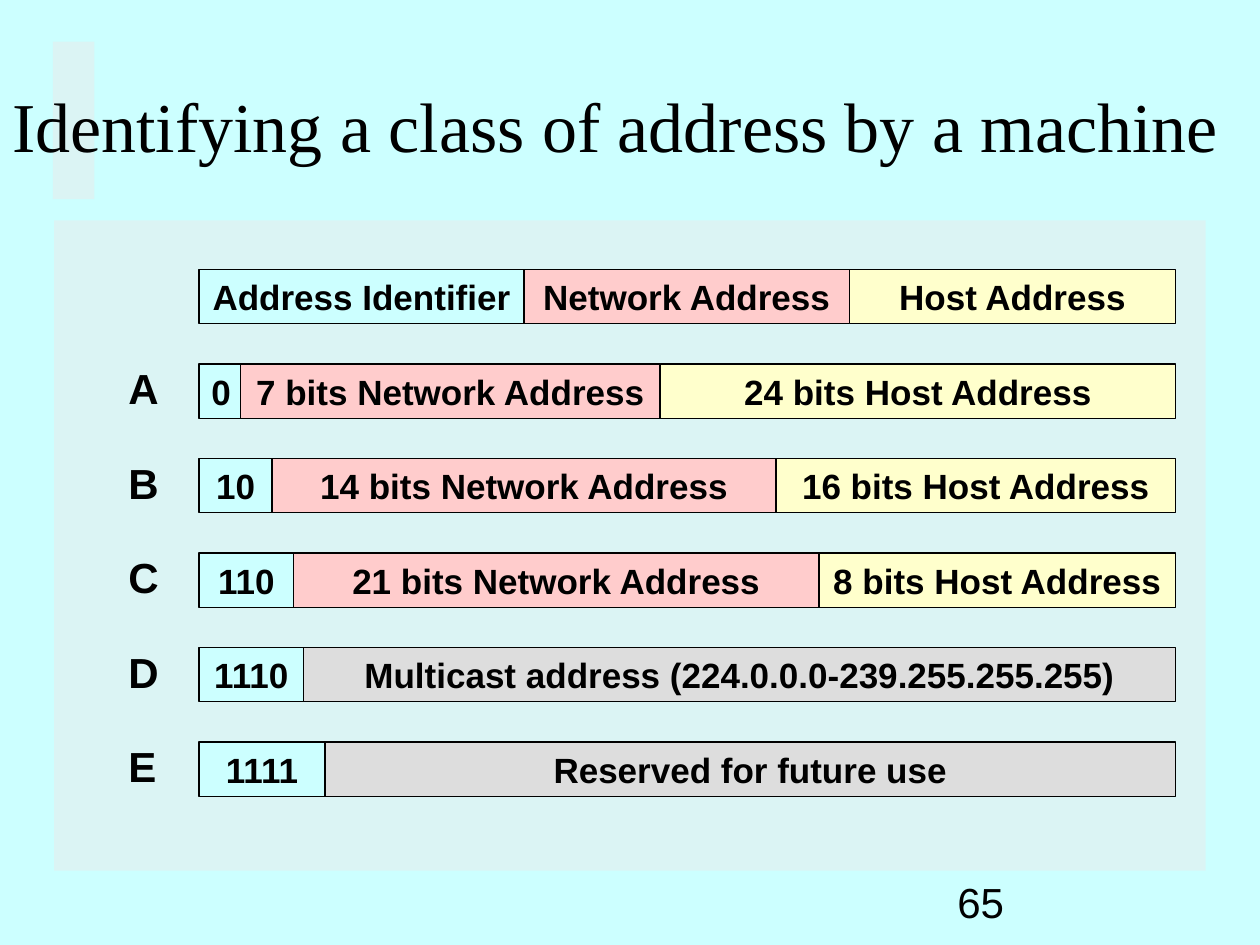
from pptx import Presentation
from pptx.util import Inches, Pt
from pptx.dml.color import RGBColor
from pptx.enum.shapes import MSO_SHAPE as Shape
from pptx.enum.text import PP_ALIGN as Align, MSO_ANCHOR as Anchor
from lxml import etree

AQUA, PINK, CREAM, GREY = "CCFFFF", "FFCCCC", "FFFFCC", "DDDDDD"
NS = "http://schemas.openxmlformats.org/drawingml/2006/main"

# Each row: class letter, then (text, fill, width); None takes what is left
ROWS = [
    ("", [("Address Identifier", AQUA, 2.58), ("Network Address", PINK, 2.58),
          ("Host Address", CREAM, None)]),
    ("A", [("0", AQUA, 0.33), ("7 bits Network Address", PINK, 3.33),
           ("24 bits Host Address", CREAM, None)]),
    ("B", [("10", AQUA, 0.58), ("14 bits Network Address", PINK, 4),
           ("16 bits Host Address", CREAM, None)]),
    ("C", [("110", AQUA, 0.75), ("21 bits Network Address", PINK, 4.17),
           ("8 bits Host Address", CREAM, None)]),
    ("D", [("1110", AQUA, 0.83),
           ("Multicast address (224.0.0.0-239.255.255.255)", GREY, None)]),
    ("E", [("1111", AQUA, 1), ("Reserved for future use", GREY, None)]),
]


def color(code):
    return RGBColor.from_string(code)


def write(shape, text, size=20, font="Arial", bold=False,
          align=Align.LEFT, anchor=Anchor.TOP):
    frame = shape.text_frame
    frame.word_wrap = True
    frame.vertical_anchor = anchor
    para = frame.paragraphs[0]
    para.alignment = align
    run = para.add_run()
    run.text = text
    run.font.size = Pt(size)
    run.font.name = font
    run.font.bold = bold
    run.font.color.rgb = color("000000")


def label(slide, box, text, **style):
    write(slide.shapes.add_textbox(*map(Inches, box)), text, **style)


def block(slide, box, fill):
    shape = slide.shapes.add_shape(Shape.RECTANGLE, *map(Inches, box))
    shape.shadow.inherit = False
    shape.fill.solid()
    shape.fill.fore_color.rgb = color(fill)
    shape.line.fill.background()
    return shape


def panel(slide, box):
    """Half-transparent backing."""
    shape = block(slide, box, "EAEAEA")
    tone = shape.fill._xPr.find(f".//{{{NS}}}srgbClr")
    etree.SubElement(tone, f"{{{NS}}}alpha", val="50000")


def fields(slide, box, name, parts):
    """One address layout: class letter, then adjoining fields."""
    left, top, width, height = box
    if name:
        label(slide, (left - 0.66, top - 0.06, 0.5, 0.5), name, size=24, bold=True)
    x = left
    for text, fill, span in parts:
        span = span or left + width - x
        cell = block(slide, (x, top, span, height), fill)
        cell.line.color.rgb = color("000000")
        cell.line.width = Pt(0.75)
        write(cell, text, bold=True, align=Align.CENTER)
        x += span


def chart(slide, box):
    """Stack of address layouts at an even pitch."""
    left, top, width, height = box
    pitch = height / len(ROWS)
    for i, (name, parts) in enumerate(ROWS):
        fields(slide, (left, top + i * pitch, width, 0.43), name, parts)


def main():
    deck = Presentation()
    deck.slide_width, deck.slide_height = Inches(10), Inches(7.5)
    slide = deck.slides.add_slide(deck.slide_layouts[6])
    back = slide.background.fill
    back.solid()
    back.fore_color.rgb = color(AQUA)

    # Backing panels
    panel(slide, (0.43, 1.75, 9.14, 5.16))
    panel(slide, (0.42, 0.33, 0.33, 1.25))

    # Page number and title
    label(slide, (7.5, 6.91, 2.08, 0.5), "65", size=24, anchor=Anchor.MIDDLE)
    label(slide, (0, 0.38, 10, 1.21), "Identifying a class of address by a machine",
          size=40, font="Times New Roman", anchor=Anchor.MIDDLE)

    # Address classes
    chart(slide, (1.58, 2.14, 7.75, 4.5))
    deck.save("out.pptx")


if __name__ == "__main__":
    main()
